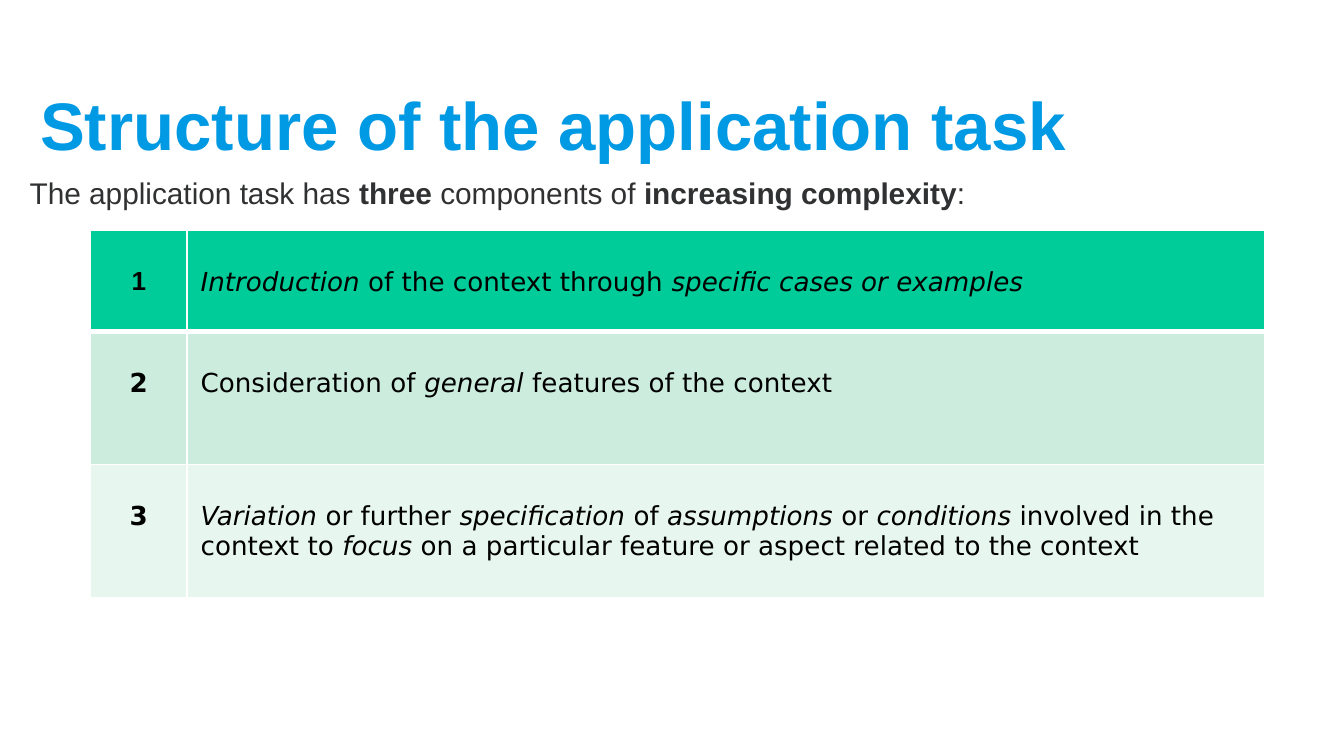
from lxml import etree
from pptx import Presentation
from pptx.dml.color import RGBColor
from pptx.enum import text
from pptx.oxml import ns
from pptx.util import Pt

WHITE = RGBColor(0xFF, 0xFF, 0xFF)
BLACK = RGBColor(0, 0, 0)
BLUE = RGBColor(0x00, 0x99, 0xE3)
GREY = RGBColor(0x30, 0x31, 0x32)
GREEN = RGBColor(0x00, 0xCC, 0x99)
MINT = RGBColor(0xCC, 0xEC, 0xDE)
PALE_MINT = RGBColor(0xE7, 0xF6, 0xEF)


def write(paragraph, marked_text, font_name, size, color, bold=False, emphasis="italic"):
    """Fill the paragraph, setting the emphasis on the parts between asterisks."""
    for index, part in enumerate(marked_text.split("*")):
        if not part:
            continue
        run = paragraph.add_run()
        run.text = part
        run.font.name = font_name
        run.font.size = Pt(size)
        run.font.color.rgb = color
        run.font.bold = bold
        if index % 2:
            setattr(run.font, emphasis, True)


def add_borders(cell, bottom_width):
    properties = cell._tc.get_or_add_tcPr()
    for side in "LRTB":
        width = bottom_width if side == "B" else 1
        line = etree.SubElement(properties, ns.qn(f"a:ln{side}"), w=str(Pt(width)))
        fill = etree.SubElement(line, ns.qn("a:solidFill"))
        etree.SubElement(fill, ns.qn("a:srgbClr"), val=str(WHITE))


presentation = Presentation()
presentation.slide_width = Pt(720)
presentation.slide_height = Pt(405)
slide = presentation.slides.add_slide(presentation.slide_layouts[6])

title = slide.shapes.add_textbox(Pt(14.4), Pt(32.4), Pt(686), Pt(67.7)).text_frame
title.word_wrap = True
title.vertical_anchor = text.MSO_ANCHOR.MIDDLE
write(title.paragraphs[0], "Structure of the application task", "Arial", 36, BLUE, bold=True)

introduction = slide.shapes.add_textbox(Pt(8.8), Pt(90), Pt(686), Pt(234)).text_frame
introduction.word_wrap = True
write(introduction.paragraphs[0],
      "The application task has *three* components of *increasing complexity*:",
      "Arial", 16, GREY, emphasis="bold")

# row height, fill, bottom border width, number font, description
components = [
    (54, GREEN, 3, "Arial",
     "*Introduction* of the context through *specific cases or examples*"),
    (71.3, MINT, 1, "DejaVu Sans",
     "Consideration of *general *features of the context"),
    (71.3, PALE_MINT, 1, "DejaVu Sans",
     "*Variation *or further *specification* of* assumptions *or *conditions* involved in the "
     "context to *focus* on a particular feature or aspect related to the context"),
]
column_widths = (51.8, 577.4)
table = slide.shapes.add_table(len(components), len(column_widths), Pt(48.5), Pt(123.5),
                               Pt(sum(column_widths)),
                               Pt(sum(row[0] for row in components))).table
for column, width in zip(table.columns, column_widths):
    column.width = Pt(width)

for index, (height, color, bottom_width, number_font, description) in enumerate(components):
    table.rows[index].height = Pt(height)
    number_cell, description_cell = table.rows[index].cells
    for cell in (number_cell, description_cell):
        add_borders(cell, bottom_width)
        cell.fill.solid()
        cell.fill.fore_color.rgb = color
        cell.margin_top = Pt(19.5)
    number = number_cell.text_frame.paragraphs[0]
    number.alignment = text.PP_ALIGN.CENTER
    write(number, str(index + 1), number_font, 14, BLACK, bold=True)
    write(description_cell.text_frame.paragraphs[0], description, "DejaVu Sans", 14, BLACK)

presentation.save("out.pptx")
